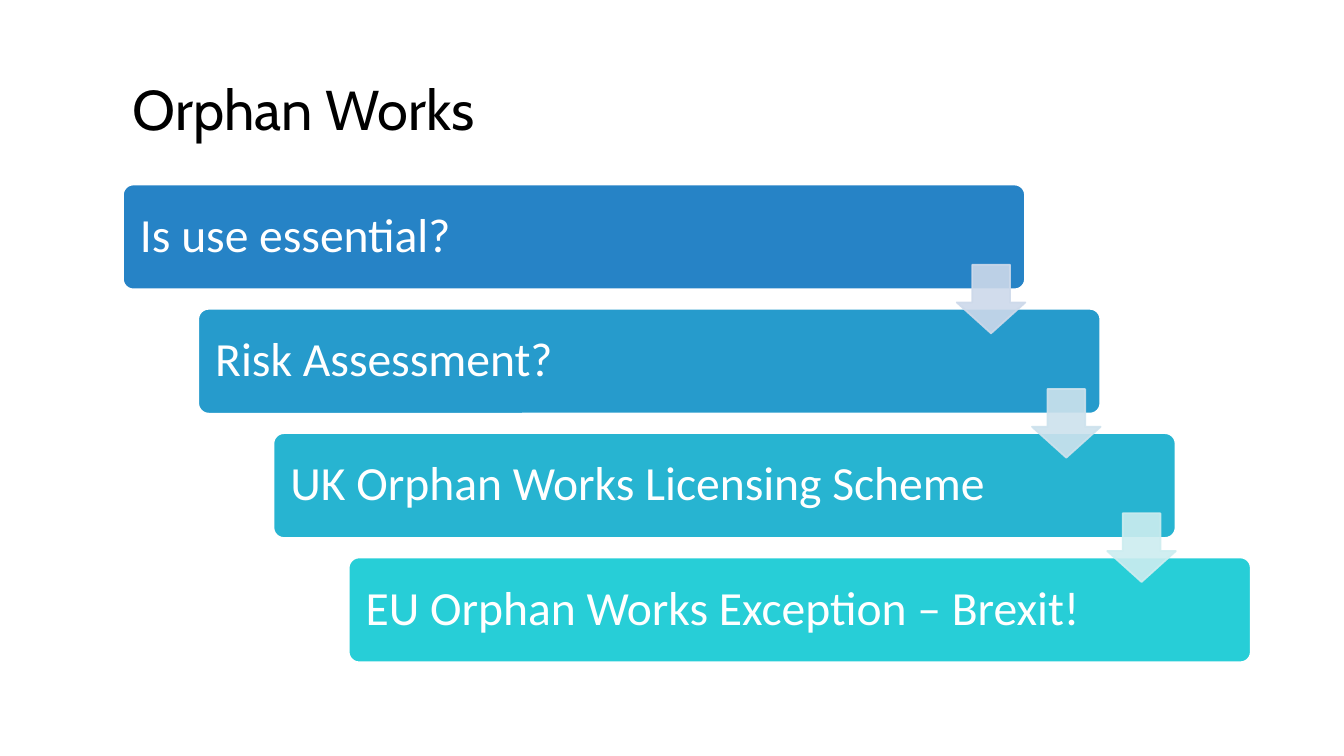
from lxml import etree
from pptx import Presentation
from pptx.dml.color import RGBColor
from pptx.enum.shapes import MSO_SHAPE
from pptx.enum.text import MSO_ANCHOR, PP_ALIGN
from pptx.oxml.ns import qn
from pptx.util import Pt

ROUNDED = MSO_SHAPE.ROUNDED_RECTANGLE
DOWN_ARROW = MSO_SHAPE.DOWN_ARROW
MIDDLE = MSO_ANCHOR.MIDDLE
LEFT = PP_ALIGN.LEFT

# Staircase: each step moves right and down by the same amount
STEP_X, STEP_Y = 53.75, 88.8
BAR_LEFT, BAR_TOP, BAR_WIDTH, BAR_HEIGHT = 87.8, 131.8, 644.4, 74.9
ARROW_LEFT, ARROW_TOP, ARROW_SIZE = 683.4, 189.1, 49

STEPS = [
    ("Is use essential?", "2683C6"),
    ("Risk Assessment?", "269BCC"),
    ("UK Orphan Works Licensing Scheme", "27B4D1"),
    ("EU Orphan Works Exception – Brexit!", "27CED7"),
]
ARROW_COLORS = ["CDD9EA", "CDE2ED", "CDEDF0"]


def rgb(color):
    return RGBColor.from_string(color)


def write_text(frame, text, font, size, color, inset_x=7.2, inset_y=3.6):
    frame.word_wrap = True
    frame.vertical_anchor = MIDDLE
    frame.margin_left = frame.margin_right = Pt(inset_x)
    frame.margin_top = frame.margin_bottom = Pt(inset_y)
    paragraph = frame.paragraphs[0]
    paragraph.alignment = LEFT
    paragraph.line_spacing = 0.9
    run = paragraph.add_run()
    run.text = text
    run.font.name = font
    run.font.size = Pt(size)
    run.font.color.rgb = rgb(color)


def set_opacity(shape, percent):
    for color in shape.fill._xPr.iter(qn("a:srgbClr")):
        alpha = etree.SubElement(color, qn("a:alpha"))
        alpha.set("val", str(percent * 1000))


def add_filled_shape(slide, kind, left, top, width, height, fill, line, adjustments):
    shape = slide.shapes.add_shape(kind, Pt(left), Pt(top), Pt(width), Pt(height))
    shape.shadow.inherit = False
    for index, value in enumerate(adjustments):
        shape.adjustments[index] = value
    shape.fill.solid()
    shape.fill.fore_color.rgb = rgb(fill)
    shape.line.color.rgb = rgb(line)
    shape.line.width = Pt(1.25)
    return shape


def add_title(slide, text):
    title = slide.shapes.add_textbox(Pt(87.8), Pt(40.3), Pt(805.7), Pt(79.9))
    write_text(title.text_frame, text, font="Cabin", size=40, color="000000")


def add_step(slide, index, text, color):
    bar = add_filled_shape(
        slide, ROUNDED, BAR_LEFT + index * STEP_X, BAR_TOP + index * STEP_Y,
        BAR_WIDTH, BAR_HEIGHT, color, "FFFFFF", [0.1])
    write_text(bar.text_frame, text, font="Calibri", size=34, color="FFFFFF",
               inset_x=10, inset_y=10)


def add_step_arrow(slide, index, color):
    arrow = add_filled_shape(
        slide, DOWN_ARROW, ARROW_LEFT + index * STEP_X, ARROW_TOP + index * STEP_Y,
        ARROW_SIZE, ARROW_SIZE, color, color, [0.55, 0.45])
    set_opacity(arrow, 90)


def main():
    presentation = Presentation()
    presentation.slide_width = Pt(960)
    presentation.slide_height = Pt(540)
    slide = presentation.slides.add_slide(presentation.slide_layouts[6])

    add_title(slide, "Orphan Works")

    # Bars first, so that the arrows lie over them
    for index, (text, color) in enumerate(STEPS):
        add_step(slide, index, text, color)
    for index, color in enumerate(ARROW_COLORS):
        add_step_arrow(slide, index, color)

    presentation.save("out.pptx")


if __name__ == "__main__":
    main()
